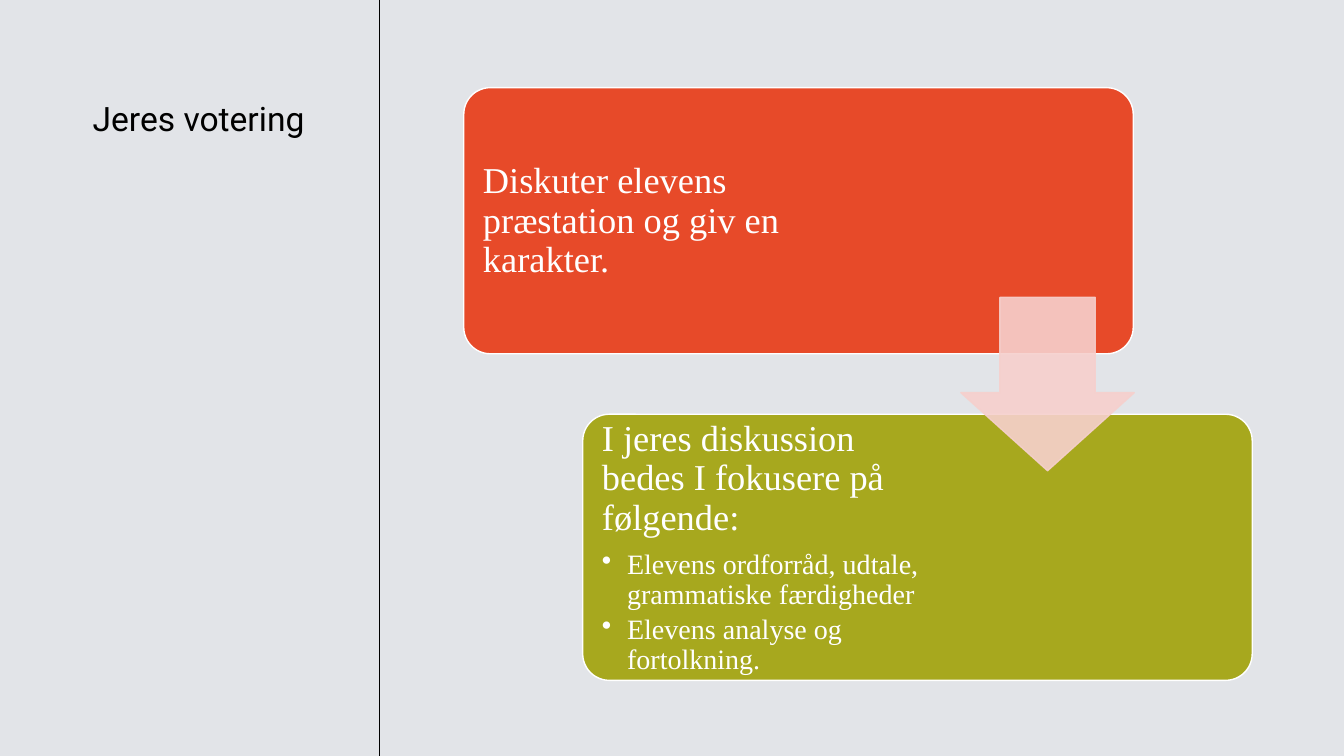
from lxml import etree
from pptx import Presentation
from pptx.dml.color import RGBColor
from pptx.enum.shapes import MSO_CONNECTOR, MSO_SHAPE
from pptx.enum.text import MSO_ANCHOR
from pptx.oxml.ns import qn
from pptx.util import Inches, Pt

BACKGROUND = RGBColor(0xE2, 0xE4, 0xE8)
BLACK = RGBColor(0x00, 0x00, 0x00)
WHITE = RGBColor(0xFF, 0xFF, 0xFF)
RED = RGBColor(0xE7, 0x4A, 0x29)
OLIVE = RGBColor(0xA7, 0xA8, 0x1E)
PINK = RGBColor(0xF6, 0xD0, 0xCD)

HEADING = {"size": Pt(26), "name": "Times New Roman"}
BULLET = {"size": Pt(20), "name": "Times New Roman"}
TITLE = {"size": Pt(24), "name": "Roboto"}


def add_shape(kind, box, adjustments, fill, line):
    s = slide.shapes.add_shape(kind, *map(Inches, box))
    s.shadow.inherit = False
    for i, value in enumerate(adjustments):
        s.adjustments[i] = value
    s.fill.solid()
    s.fill.fore_color.rgb = fill
    s.line.color.rgb = line
    s.line.width = Pt(1)
    return s


def add_text(box, paragraphs, color, inset, anchor):
    tf = slide.shapes.add_textbox(*map(Inches, box)).text_frame
    margins = dict.fromkeys(("left", "top", "right", "bottom"), Inches(inset))
    for side, margin in margins.items():
        setattr(tf, f"margin_{side}", margin)
    tf.word_wrap = True
    tf.vertical_anchor = anchor
    for i, (text, style, space_after) in enumerate(paragraphs):
        p = tf.add_paragraph() if i else tf.paragraphs[0]
        p.line_spacing = 0.9
        p.space_after = Pt(space_after)
        if style is BULLET:
            p.level = 1
            pPr = p._p.get_or_add_pPr()
            pPr.set("marL", str(Inches(0.25)))
            pPr.set("indent", str(Inches(-0.25)))
            etree.SubElement(pPr, qn("a:buChar")).set("char", "•")
        r = p.add_run()
        r.text = text
        r.font.color.rgb = color
        for name, value in style.items():
            setattr(r.font, name, value)


prs = Presentation()
prs.slide_width, prs.slide_height = Inches(13.33), Inches(7.5)
slide = prs.slides.add_slide(prs.slide_layouts[6])
slide.background.fill.solid()
slide.background.fill.fore_color.rgb = BACKGROUND

# Title and divider
add_text((0.82, 0.92, 2.5, 5.67), [("Jeres votering", TITLE, 0)],
         BLACK, 0.1, MSO_ANCHOR.TOP)
divider = slide.shapes.add_connector(
    MSO_CONNECTOR.STRAIGHT, Inches(3.76), Inches(7.5), Inches(3.76), Inches(0))
divider.line.color.rgb = BLACK
divider.line.width = Pt(0.5)
etree.SubElement(divider._element.spPr, qn("a:effectLst"))

# Two steps, the second one shifted down and to the right
steps = [
    (4.6, 0.87, 3.91, RED,
     [("Diskuter elevens præstation og giv en karakter.", HEADING, 9)]),
    (5.78, 4.11, 3.59, OLIVE,
     [("I jeres diskussion bedes I fokusere på følgende:", HEADING, 9),
      ("Elevens ordforråd, udtale, grammatiske færdigheder", BULLET, 3),
      ("Elevens analyse og fortolkning.", BULLET, 3)]),
]
for left, top, text_width, fill, paragraphs in steps:
    add_shape(MSO_SHAPE.ROUNDED_RECTANGLE, (left, top, 6.64, 2.64), [0.1], fill, WHITE)
    add_text((left + 0.08, top + 0.08, text_width, 2.49), paragraphs,
             WHITE, 0.11, MSO_ANCHOR.MIDDLE)

# Translucent arrow between the steps
arrow = add_shape(MSO_SHAPE.DOWN_ARROW, (9.53, 2.95, 1.72, 1.72), [0.55, 0.45], PINK, PINK)
for color in arrow._element.spPr.iter(qn("a:srgbClr")):
    etree.SubElement(color, qn("a:alpha")).set("val", "90000")

prs.save("out.pptx")
